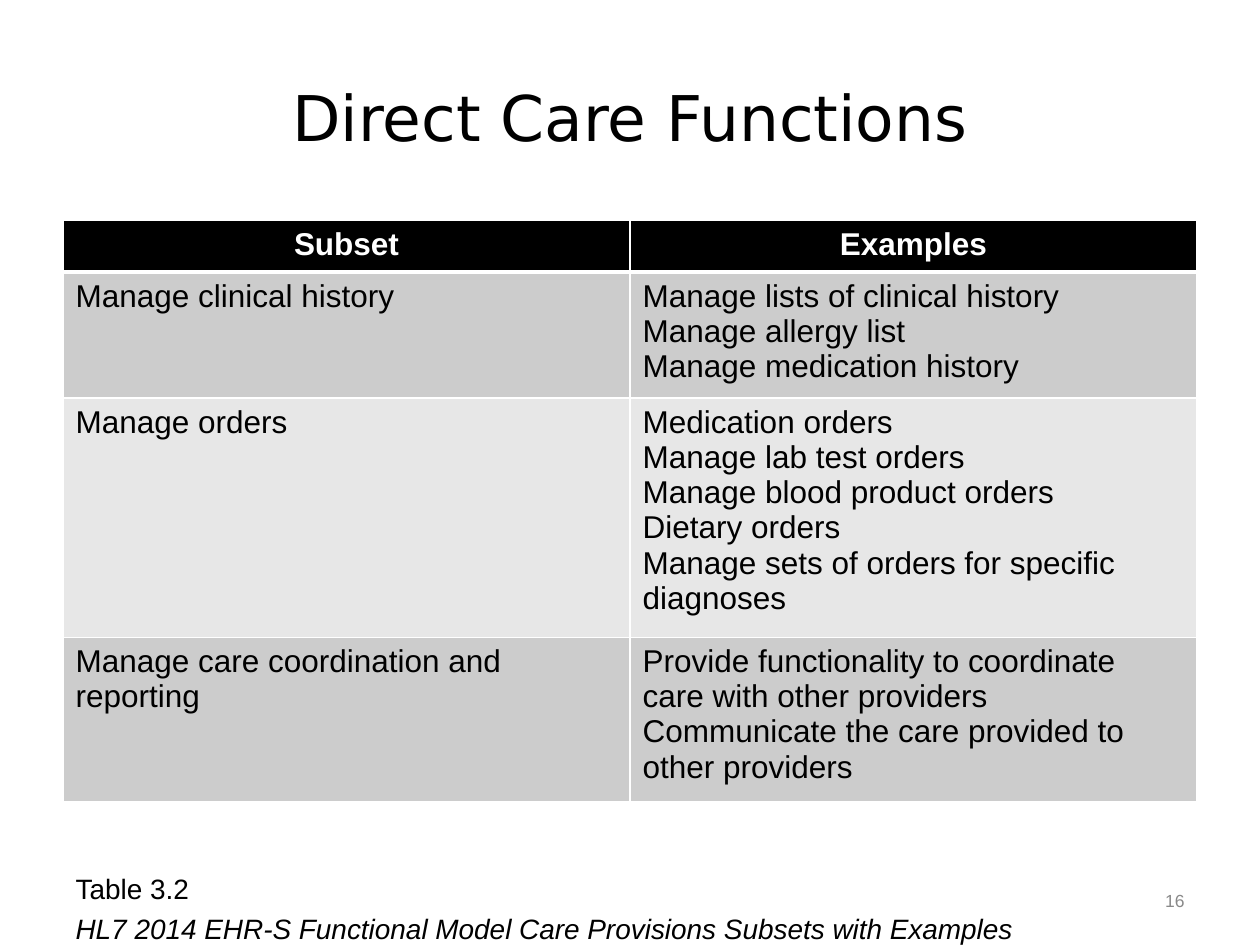
import pptx
import pptx.util
import pptx.dml.color
import pptx.enum.text
import pptx.oxml
import pptx.oxml.ns

Inches, Pt = pptx.util.Inches, pptx.util.Pt
ALIGN, ANCHOR = pptx.enum.text.PP_ALIGN, pptx.enum.text.MSO_ANCHOR
COLORS = {"text": "000000", "header": "000000", "white": "FFFFFF",
          "dark_band": "CCCCCC", "light_band": "E7E7E7", "number": "898989"}


def write(tf, text, size=18, font="Arial", color="text", bold=False,
          italic=False, align=ALIGN.LEFT, anchor=ANCHOR.TOP, first=True, before=0):
    """Write one paragraph, reusing the frame's empty one when first."""
    tf.word_wrap = True
    tf.vertical_anchor = anchor
    p = tf.paragraphs[0] if first else tf.add_paragraph()
    p.alignment = align
    p.space_before = Pt(before)
    r = p.add_run()
    r.text = text
    r.font.size, r.font.name = Pt(size), font
    r.font.bold, r.font.italic = bold, italic
    r.font.color.rgb = pptx.dml.color.RGBColor.from_string(COLORS[color])
    return p


def border(cell, side, width):
    cell._tc.get_or_add_tcPr().append(pptx.oxml.parse_xml(
        f'<a:ln{side} {pptx.oxml.ns.nsdecls("a")} w="{Pt(width)}"><a:solidFill>'
        f'<a:srgbClr val="{COLORS["white"]}"/></a:solidFill></a:ln{side}>'))


prs = pptx.Presentation()
prs.slide_width, prs.slide_height = Inches(10), Inches(7.5)
s = prs.slides.add_slide(prs.slide_layouts[1])
margin = Inches(0.5)
content_w = prs.slide_width - 2 * margin

# Title
title, body = s.placeholders
title.left, title.top, title.width, title.height = margin, Inches(0.3), content_w, Inches(1.25)
write(title.text_frame, "Direct Care Functions", size=36, font="DejaVu Sans",
      align=ALIGN.CENTER, anchor=ANCHOR.MIDDLE)

# Table of subsets and examples
rows = [
    (0.41, ["Subset"], ["Examples"]),
    (1, ["Manage clinical history"],
     ["Manage lists of clinical history", "Manage allergy list",
      "Manage medication history"]),
    (1.9, ["Manage orders"],
     ["Medication orders", "Manage lab test orders", "Manage blood product orders",
      "Dietary orders", "Manage sets of orders for specific diagnoses"]),
    (1.3, ["Manage care coordination and reporting"],
     ["Provide functionality to coordinate care with other providers",
      "Communicate the care provided to other providers"]),
]
table = s.shapes.add_table(len(rows), 2, margin, Inches(1.75), content_w,
                           Inches(sum(row[0] for row in rows))).table
for i, (height, *columns) in enumerate(rows):
    table.rows[i].height = Inches(height)
    header = i == 0
    band = "header" if header else "dark_band" if i % 2 else "light_band"
    for j, lines in enumerate(columns):
        cell = table.cell(i, j)
        for side in "LRTB":
            thick = (i, side) in ((0, "B"), (1, "T"))
            border(cell, side, 3 if thick else 1)
        cell.fill.solid()
        cell.fill.fore_color.rgb = pptx.dml.color.RGBColor.from_string(COLORS[band])
        for n, line in enumerate(lines):
            write(cell.text_frame, line, bold=header, first=n == 0,
                  color="white" if header else "text",
                  align=ALIGN.CENTER if header else ALIGN.LEFT)

# Caption
body.left, body.top, body.width, body.height = margin, Inches(6.87), Inches(8.35), Inches(0.58)
tf = body.text_frame
tf.auto_size = pptx.enum.text.MSO_AUTO_SIZE.NONE
captions = ["Table 3.2",
            "HL7 2014 EHR-S Functional Model Care Provisions Subsets with Examples"]
for n, text in enumerate(captions):
    p = write(tf, text, size=16, italic=n == 1, first=n == 0, before=3.2 * n)
    pPr = p._p.get_or_add_pPr()
    pPr.set("marL", "0")
    pPr.set("indent", "0")
    pPr.append(pptx.oxml.parse_xml(f'<a:buNone {pptx.oxml.ns.nsdecls("a")}/>'))

# Slide number
sp = s.shapes.add_textbox(Inches(8.94), Inches(6.85), Inches(0.56), Inches(0.6))
write(sp.text_frame, "16", size=10, color="number", align=ALIGN.RIGHT, anchor=ANCHOR.MIDDLE)

prs.save("out.pptx")
